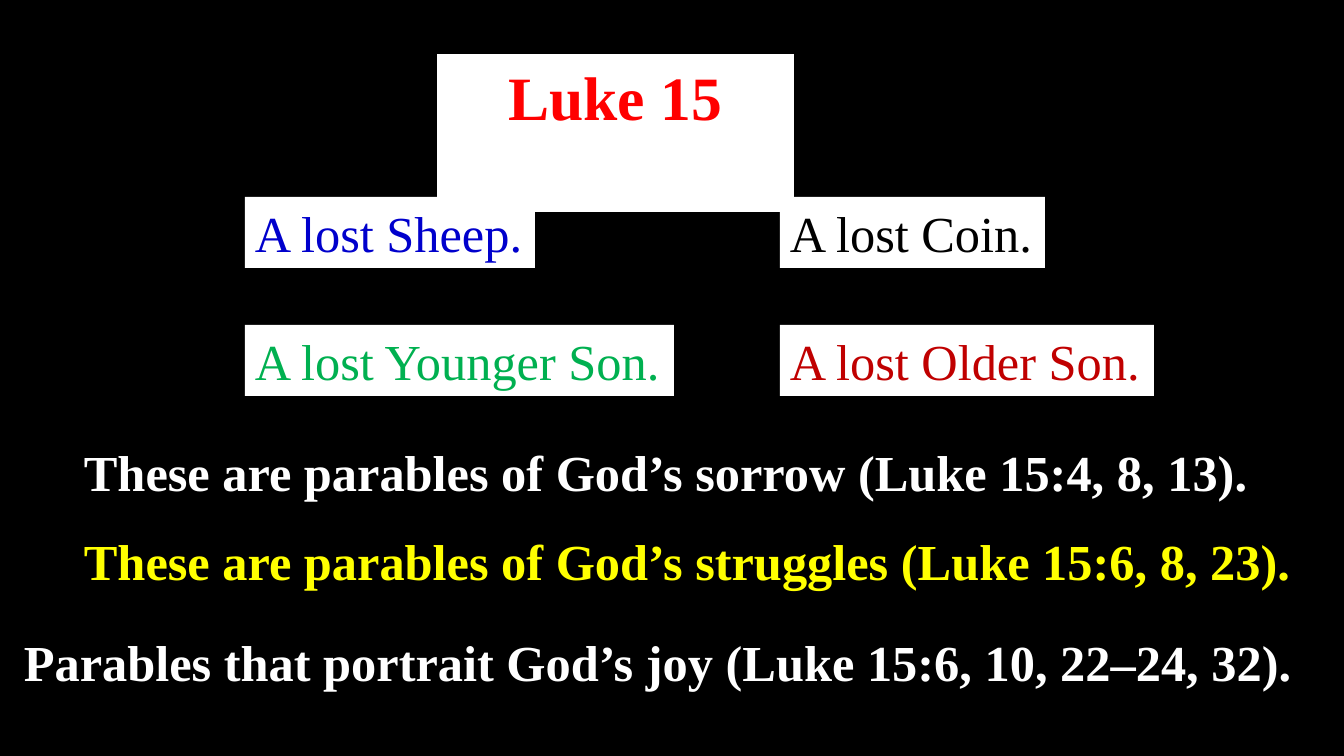
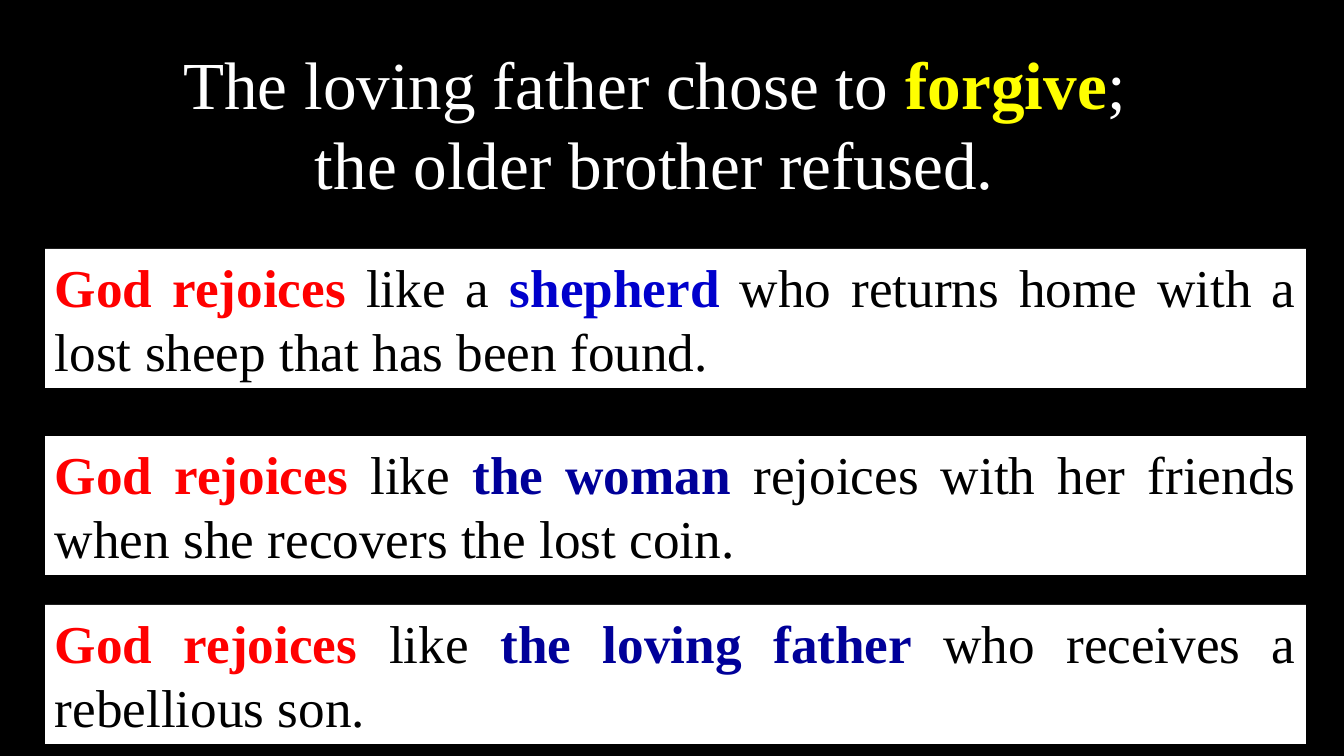
from pptx import Presentation
from pptx import util as u
from pptx.dml.color import RGBColor
from pptx.enum import text

BLACK = RGBColor(0x00, 0x00, 0x00)
WHITE = RGBColor(0xFF, 0xFF, 0xFF)
RED = RGBColor(0xFF, 0x00, 0x00)
YELLOW = RGBColor(0xFF, 0xFF, 0x00)
BLUE = RGBColor(0x00, 0x00, 0xCC)
NAVY = RGBColor(0x00, 0x00, 0x99)
GREEN = RGBColor(0x00, 0xB0, 0x50)
CRIMSON = RGBColor(0xC0, 0x00, 0x00)

FONT = "Times New Roman"
EMU_PER_PX = 914400 / 100.8
TITLE_ONLY = 5

CENTERED = {"alignment": text.PP_ALIGN.CENTER}
LEFT = {"alignment": text.PP_ALIGN.LEFT}
JUSTIFIED = {"alignment": text.PP_ALIGN.JUSTIFY}
TIGHT = {
    **LEFT,
    "line_spacing": u.Pt(12),
    "space_before": u.Pt(9),
    "space_after": u.Pt(2),
}


def px(length):
    return u.Emu(round(length * EMU_PER_PX))


def apply(target, formats):
    for name, value in formats.items():
        setattr(target, name, value)


def fill_panel(panel, box, lines, size, layout, wrap=True, fill=None):
    apply(panel, dict(zip(("left", "top", "width", "height"), map(px, box))))
    if fill is not None:
        panel.fill.solid()
        panel.fill.fore_color.rgb = fill
    frame = panel.text_frame
    apply(frame, {
        "word_wrap": wrap,
        "auto_size": text.MSO_AUTO_SIZE.SHAPE_TO_FIT_TEXT,
        "vertical_anchor": text.MSO_ANCHOR.TOP,
    })
    for index, line in enumerate(lines):
        paragraph = frame.add_paragraph() if index else frame.paragraphs[0]
        apply(paragraph, layout)
        for wording, color, bold in line:
            run = paragraph.add_run()
            run.text = wording
            apply(run.font, {"name": FONT, "size": u.Pt(size), "bold": bold})
            run.font.color.rgb = color


def add_panel(slide, box, *content, **options):
    fill_panel(slide.shapes.add_textbox(0, 0, 0, 0), box, *content, **options)


def add_losses(slide, box):
    left, top, column_step, row_step, height = box
    losses = [
        ("A lost Sheep.", BLUE, 290),
        ("A lost Coin.", BLACK, 265),
        ("A lost Younger Son.", GREEN, 429),
        ("A lost Older Son.", CRIMSON, 374),
    ]
    for index, (loss, color, width) in enumerate(losses):
        row, column = divmod(index, 2)
        place = (left + column * column_step, top + row * row_step, width, height)
        add_panel(slide, place, [[(loss, color, False)]], 36, LEFT,
                  wrap=False, fill=WHITE)


def add_statements(slide, box):
    left, top, right, height = box
    statements = [
        ("These are parables of God’s sorrow (Luke 15:4, 8, 13).",
         WHITE, 60, 0, 1196, False),
        ("These are parables of God’s struggles (Luke 15:6, 8, 23).",
         YELLOW, 60, 89, 1239, False),
        ("Parables that portrait God’s joy (Luke 15:6, 10, 22–24, 32).",
         WHITE, 0, 190, right - left, True),
    ]
    for statement, color, indent, drop, width, wrap in statements:
        place = (left + indent, top + drop, width, height)
        add_panel(slide, place, [[(statement, color, True)]], 36, TIGHT, wrap=wrap)


def add_rejoicings(slide, box):
    left, top, width, height = box
    rejoicings = [
        (0, "like a ", "shepherd", BLUE,
         " who returns home with a lost sheep that has been found. "),
        (187, "like ", "the woman ", NAVY,
         "rejoices with her friends when she recovers the lost coin."),
        (356, "like ", "the loving father ", NAVY,
         "who receives a rebellious son."),
    ]
    for drop, link, figure, color, deed in rejoicings:
        verse = [
            ("God rejoices ", RED, True),
            (link, BLACK, False),
            (figure, color, True),
            (deed, BLACK, False),
        ]
        add_panel(slide, (left, top + drop, width, height), [verse], 38,
                  JUSTIFIED, fill=WHITE)


def build_parables(slide):
    fill_panel(slide.shapes.title, (437, 54, 357, 85),
               [[("Luke 15", RED, True)]], 44, CENTERED, fill=WHITE)
    add_losses(slide, (245, 197, 535, 128, 71))
    add_statements(slide, (14, 480, 1312, 27))


def build_forgiveness(slide):
    heading = [
        [("The loving father chose to ", WHITE, False),
         ("forgive", YELLOW, True),
         ("; ", WHITE, False)],
        [("the older brother refused. ", WHITE, False)],
    ]
    fill_panel(slide.shapes.title, (173, 37, 980, 173), heading, 48, CENTERED,
               wrap=False)
    add_rejoicings(slide, (45, 249, 1261, 139))


def main():
    deck = Presentation()
    apply(deck, {"slide_width": px(1344), "slide_height": px(756)})
    backdrop = deck.slide_master.background.fill
    backdrop.solid()
    backdrop.fore_color.rgb = BLACK
    for build in (build_parables, build_forgiveness):
        build(deck.slides.add_slide(deck.slide_layouts[TITLE_ONLY]))
    deck.save("out.pptx")


if __name__ == "__main__":
    main()
